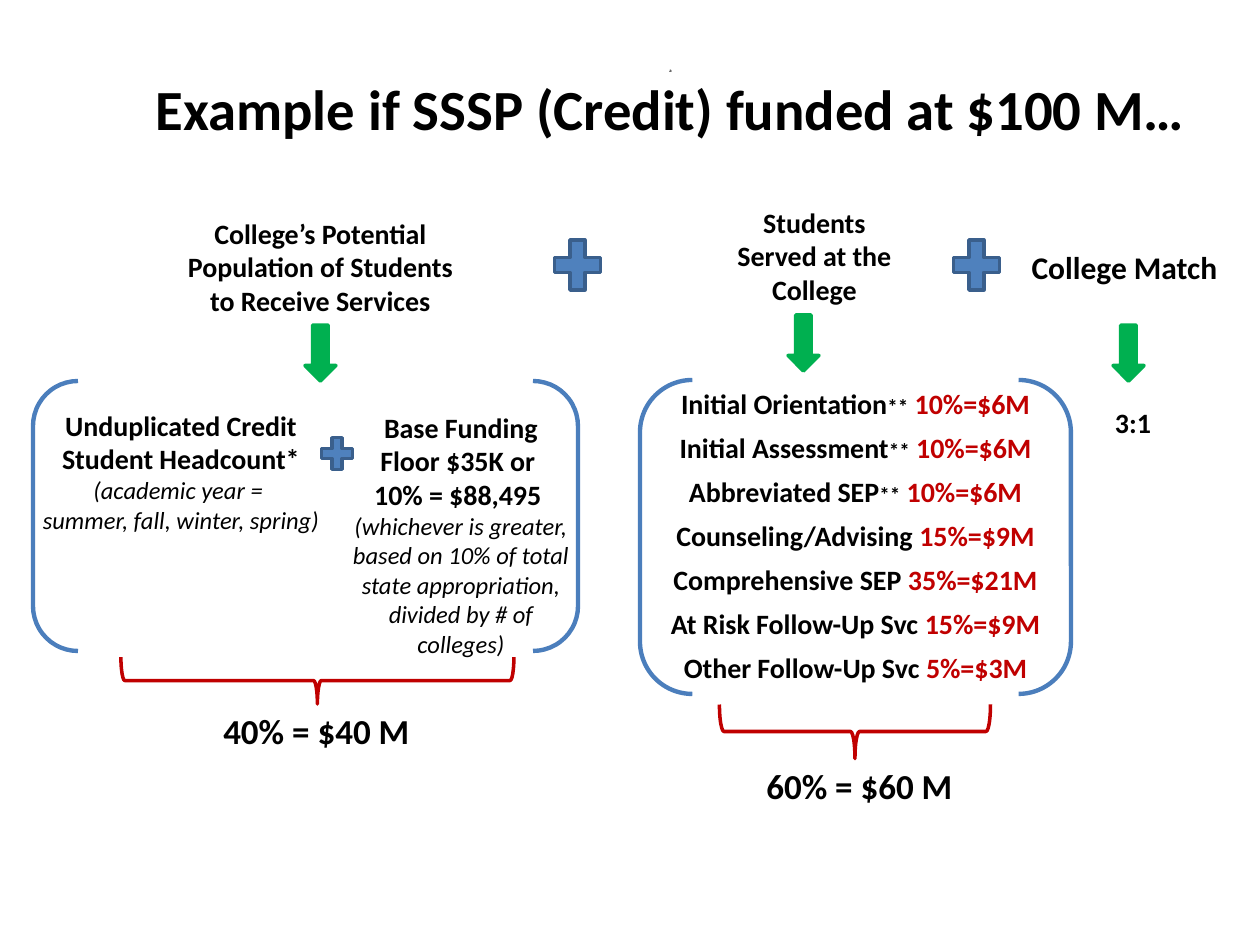
from pptx import Presentation
from pptx.dml.color import RGBColor as Rgb
from pptx.enum.shapes import MSO_SHAPE as Shape
from pptx.enum.text import MSO_ANCHOR as Anchor, MSO_AUTO_SIZE as AutoSize, PP_ALIGN as Align
from pptx.util import Pt

PX = 914400 / 126
COLORS = {"black": "000000", "red": "C00000", "green": "00B050",
          "blue": "4F81BD", "navy": "3A5F8C", "bracket": "4B7EBC"}


def scale(*lengths):
    return [round(length * PX) for length in lengths]


def write(frame, lines, space_after=0):
    for index, line in enumerate(lines):
        para = frame.paragraphs[0] if index == 0 else frame.add_paragraph()
        para.alignment = Align.CENTER
        para.space_after = Pt(space_after)
        for text, size, color, italic in line:
            span = para.add_run()
            span.text = text
            formats = {"name": "Calibri", "size": Pt(size), "bold": not italic, "italic": italic}
            for key, value in formats.items():
                setattr(span.font, key, value)
            span.font.color.rgb = Rgb.from_string(COLORS[color])


deck = Presentation()
deck.slide_width, deck.slide_height = scale(1260, 945)
page = deck.slides.add_slide(deck.slide_layouts[5])

title = page.shapes.title
title.left, title.top, title.width, title.height = scale(135, 63, 1071, 84)
title.text_frame.auto_size = AutoSize.NONE
title.text_frame.vertical_anchor = Anchor.MIDDLE
write(title.text_frame, [
    [("a", 2.7, "black", False)],
    [("Example if SSSP (Credit) funded at $100 M…", 32.4, "black", False)],
])

shape_styles = {
    "plus": (Shape.MATH_PLUS, "blue", "navy", 2, 0),
    "arrow": (Shape.DOWN_ARROW, "green", "green", 2, 0),
    "brackets": (Shape.DOUBLE_BRACKET, None, "bracket", 2.5, 0),
    "brace": (Shape.LEFT_BRACE, None, "red", 2, 270),
}
shapes = [
    ("plus", 546, 231, 63, 68),
    ("plus", 945, 231, 63, 68),
    ("plus", 316, 432, 42, 43),
    ("arrow", 305, 325, 31, 56),
    ("arrow", 788, 315, 31, 56),
    ("arrow", 1113, 325, 31, 56),
    ("brackets", 33, 381, 545, 270),
    ("brackets", 640, 380, 431, 314),
    ("brace", 294, 484, 47, 393),
    ("brace", 828, 596, 54, 271),
]
for kind, *bounds in shapes:
    preset, fill, line, weight, rotation = shape_styles[kind]
    shape = page.shapes.add_shape(preset, *scale(*bounds))
    shape.shadow.inherit = False
    shape.rotation = rotation
    if fill:
        shape.fill.solid()
        shape.fill.fore_color.rgb = Rgb.from_string(COLORS[fill])
    else:
        shape.fill.background()
    shape.line.color.rgb = Rgb.from_string(COLORS[line])
    shape.line.width = Pt(weight)

labels = [
    ((725, 199, 179, 115), True, 16, ["Students Served at the College"], []),
    ((1018, 242, 213, 89), False, 18, ["College Match"], []),
    ((168, 210, 305, 115), True, 16,
     ["College’s Potential Population of Students to Receive Services"], []),
    ((13, 402, 336, 140), True, 16, ["Unduplicated Credit Student Headcount*"],
     ["(academic year = ", "summer, fall, winter, spring)"]),
    ((335, 404, 252, 263), True, 16, ["Base Funding", "Floor $35K or ", "10% = $88,495 "],
     ["(whichever is greater, based on 10% of total state appropriation, divided by # of colleges)"]),
    ((210, 703, 213, 55), False, 20, ["40% = $40 M"], []),
    ((753, 758, 213, 55), False, 20, ["60% = $60 M"], []),
    ((1102, 399, 62, 47), False, 16, ["3:1"], []),
]
for bounds, wraps, size, headings, notes in labels:
    box = page.shapes.add_textbox(*scale(*bounds))
    box.text_frame.word_wrap = wraps
    write(box.text_frame, [[(text, size, "black", False)] for text in headings]
          + [[(text, 14, "black", True)] for text in notes])

services = [
    ("Initial Orientation", "**", "10%=$6M"),
    ("Initial Assessment", "**", "10%=$6M"),
    ("Abbreviated SEP", "**", "10%=$6M"),
    ("Counseling/Advising", "", "15%=$9M"),
    ("Comprehensive SEP", "", "35%=$21M"),
    ("At Risk Follow-Up Svc", "", "15%=$9M"),
    ("Other Follow-Up Svc", "", "5%=$3M"),
]
service_lines = []
for service, mark, share in services:
    spans = [(service, 16, "black", False), (mark, 12, "black", False),
             (" ", 16, "black", False), (share, 16, "red", False)]
    service_lines.append([span for span in spans if span[0]])
box = page.shapes.add_textbox(*scale(640, 380, 431, 314))
box.text_frame.word_wrap = True
write(box.text_frame, service_lines, space_after=6)

deck.save("out.pptx")
